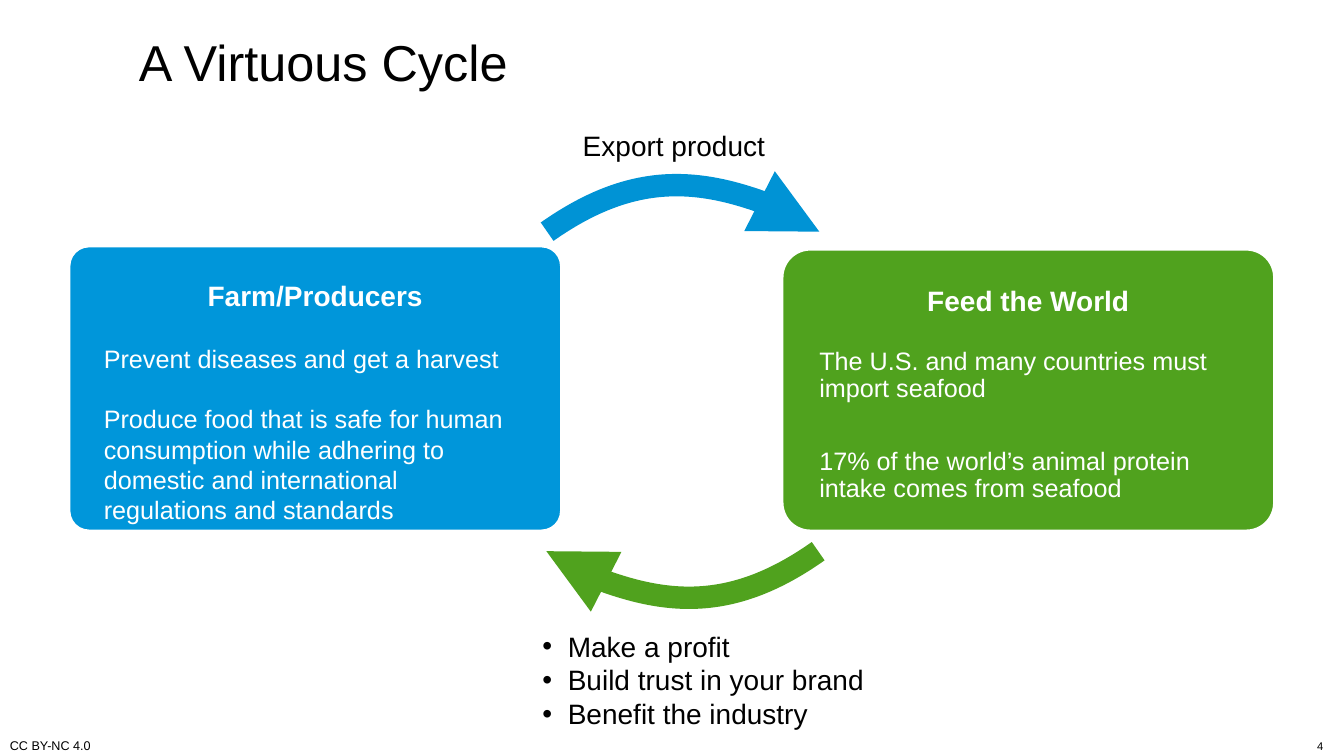
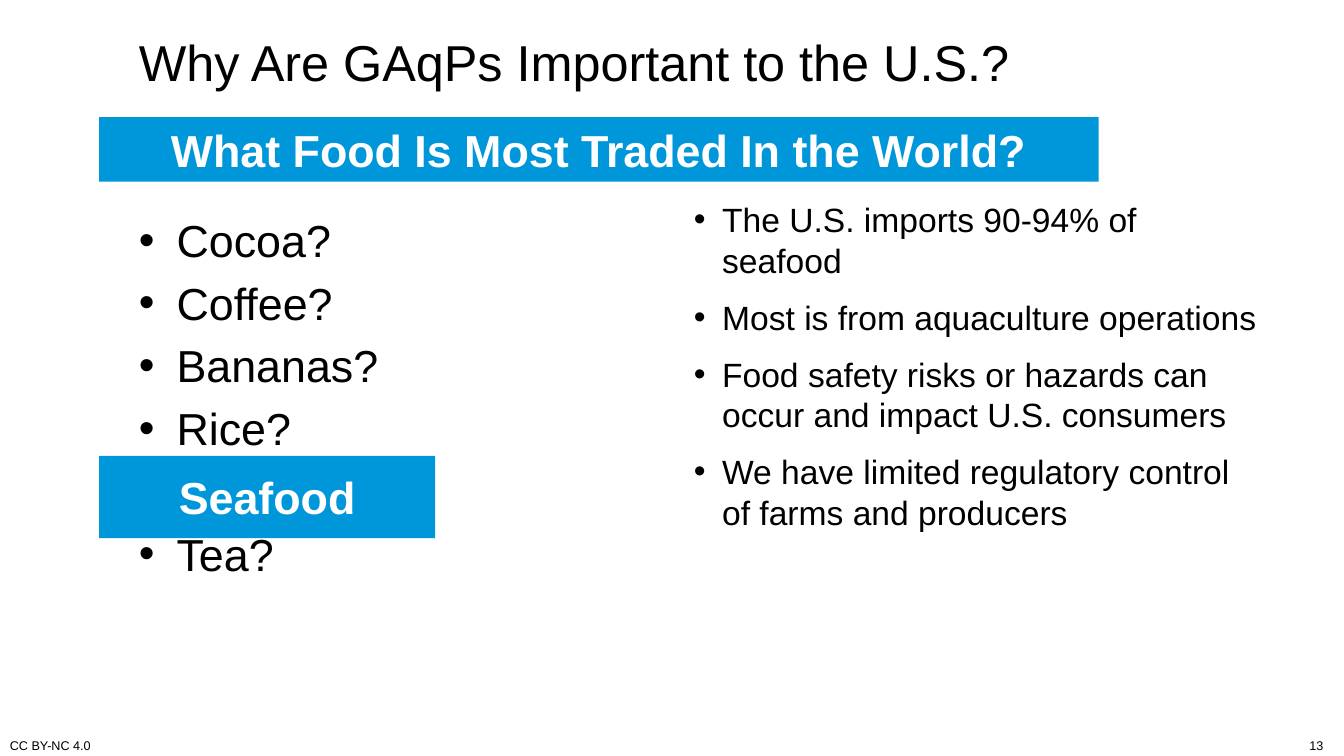
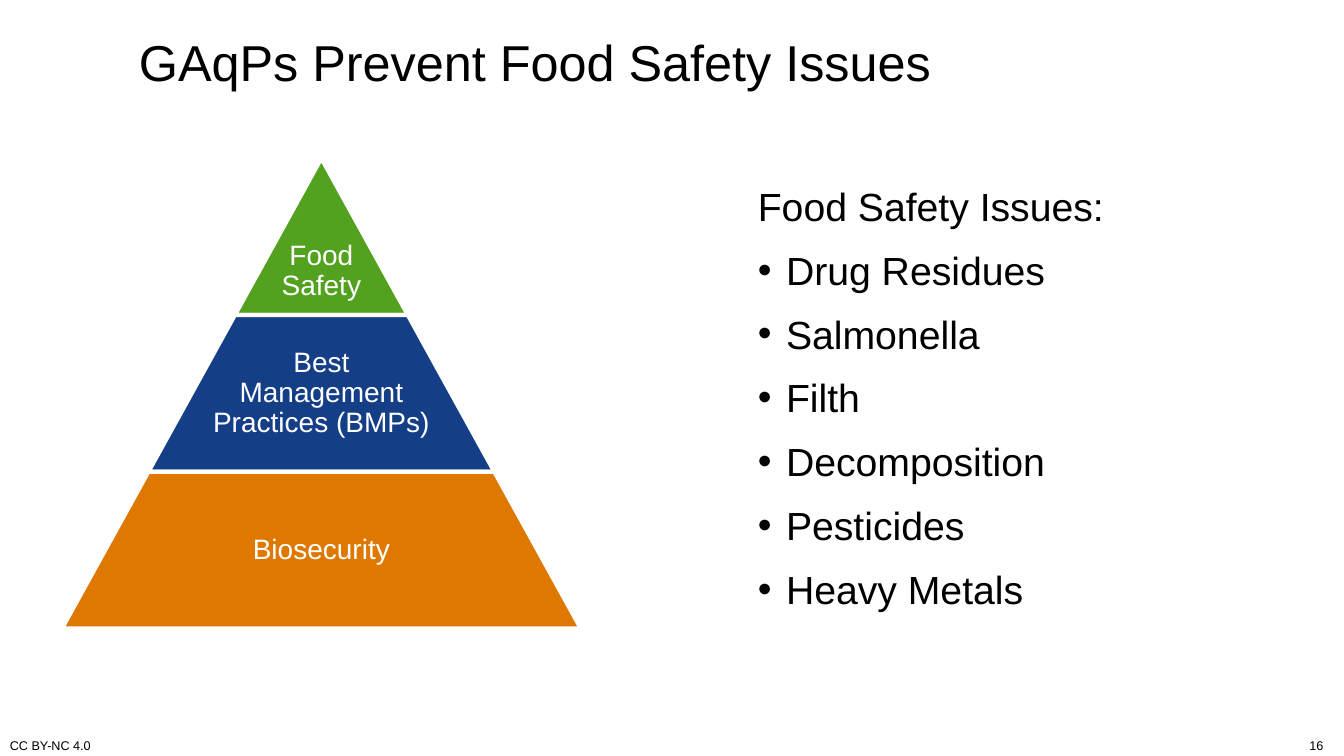
from dataclasses import dataclass
from typing import Any

import pptx
import pptx.dml.color
import pptx.enum.shapes
import pptx.enum.text
import pptx.oxml
import pptx.oxml.ns
import pptx.util

Cm = pptx.util.Cm
Pt = pptx.util.Pt
Align = pptx.enum.text.PP_ALIGN
Anchor = pptx.enum.text.MSO_ANCHOR
Kind = pptx.enum.shapes.MSO_SHAPE
qn = pptx.oxml.ns.qn
SPACE = pptx.oxml.ns.nsdecls("a")


# Theme
@dataclass(frozen=True)
class Theme:
    font: str = "Arial"
    black: str = "000000"
    white: str = "FFFFFF"
    blue: str = "0096DA"
    sky: str = "0093D5"
    green: str = "50A21E"
    leaf: str = "52A11F"
    navy: str = "143E86"
    orange: str = "DF7800"
    title: int = 36
    large: int = 32
    list: int = 28
    point: int = 24
    label: int = 20
    body: int = 18
    foot: int = 9
    small: int = 8


THEME = Theme()


@dataclass(frozen=True)
class Box:
    left: float
    top: float
    width: float
    height: float

    def cm(self) -> tuple:
        return Cm(self.left), Cm(self.top), Cm(self.width), Cm(self.height)


@dataclass(frozen=True)
class Para:
    text: str
    size: int
    color: str = THEME.black
    bold: bool = False
    align: Any = Align.LEFT
    indent: float = 0
    before: float = 0
    after: float = 0
    line: float = 1.0


@dataclass(frozen=True)
class Card:
    box: Box
    fill: str
    round: float
    paras: list


@dataclass(frozen=True)
class Arc:
    frame: Box
    start: float
    end: float
    level: float
    bend: float
    color: str


@dataclass(frozen=True)
class Tier:
    text: str
    fill: str
    width: float
    shift: float = 0


# Text
def rgb(color: str) -> pptx.dml.color.RGBColor:
    return pptx.dml.color.RGBColor.from_string(color)


def bullet(para: Any, indent: float) -> None:
    props = para._p.get_or_add_pPr()
    props.set("marL", str(Cm(indent)))
    props.set("indent", str(-Cm(indent)))
    for tag, key, value in (("a:buFont", "typeface", THEME.font),
                            ("a:buChar", "char", "•")):
        mark = pptx.oxml.parse_xml(f"<{tag} {SPACE}/>")
        mark.set(key, value)
        props.append(mark)


def write(frame: Any, paras: list, anchor: Any = Anchor.TOP,
          inset: tuple = (0.25, 0.13)) -> None:
    frame.word_wrap = True
    frame.auto_size = pptx.enum.text.MSO_AUTO_SIZE.NONE
    frame.vertical_anchor = anchor
    frame.margin_left = frame.margin_right = Cm(inset[0])
    frame.margin_top = frame.margin_bottom = Cm(inset[1])
    for num, item in enumerate(paras):
        para = frame.paragraphs[0] if num == 0 else frame.add_paragraph()
        para.text = item.text
        para.alignment = item.align
        para.line_spacing = item.line
        para.space_before = Pt(item.before if num else 0)
        para.space_after = Pt(item.after)
        if item.indent:
            bullet(para, item.indent)
        for run in para.runs:
            run.font.name = THEME.font
            run.font.size = Pt(item.size)
            run.font.bold = item.bold
            run.font.color.rgb = rgb(item.color)


def label(slide: Any, box: Box, paras: list, **style: Any) -> Any:
    shape = slide.shapes.add_textbox(*box.cm())
    write(shape.text_frame, paras, **style)
    return shape


# Shapes
def block(slide: Any, kind: Any, box: Box, fill: str, edge: float = 0) -> Any:
    shape = slide.shapes.add_shape(kind, *box.cm())
    shape.shadow.inherit = False
    shape.fill.solid()
    shape.fill.fore_color.rgb = rgb(fill)
    if edge:
        shape.line.color.rgb = rgb(THEME.white)
        shape.line.width = Pt(edge)
    else:
        shape.line.fill.background()
    return shape


def banner(slide: Any, box: Box, text: str) -> None:
    shape = block(slide, Kind.RECTANGLE, box, THEME.blue)
    write(shape.text_frame, [Para(text, THEME.large, THEME.white, True, Align.CENTER)],
          Anchor.MIDDLE)


def draw_card(slide: Any, card: Card) -> None:
    shape = block(slide, Kind.ROUNDED_RECTANGLE, card.box, card.fill, 2)
    shape.adjustments[0] = card.round
    write(shape.text_frame, card.paras, inset=(0.73, 0.76))


def draw_arc(slide: Any, arc: Arc) -> None:
    """Draw a cubic curve whose handles sit at 30% and 70% of its width."""
    frame, span = arc.frame, arc.end - arc.start
    dots = [(arc.start + span * part, arc.level + arc.bend * lift)
            for part, lift in ((0, 0), (0.3, 1), (0.7, 1), (1, 0))]
    pen = slide.shapes.build_freeform(Cm(frame.left), Cm(frame.top))
    pen.add_line_segments([(Cm(frame.left + frame.width),
                            Cm(frame.top + frame.height))], close=False)
    shape = pen.convert_to_shape()
    # Swap the frame's diagonal for the curve
    marks = [f'<a:pt x="{Cm(x - frame.left)}" y="{Cm(y - frame.top)}"/>'
             for x, y in dots]
    track = shape.element.spPr.find(".//" + qn("a:path"))
    for old in list(track):
        track.remove(old)
    for tag, part in (("moveTo", marks[:1]), ("cubicBezTo", marks[1:])):
        track.append(pptx.oxml.parse_xml(
            f"<a:{tag} {SPACE}>{''.join(part)}</a:{tag}>"))
    shape.shadow.inherit = False
    shape.fill.background()
    shape.line.color.rgb = rgb(arc.color)
    shape.line.width = Pt(16)
    tip = pptx.oxml.parse_xml(f'<a:tailEnd {SPACE} type="triangle"/>')
    shape.element.spPr.find(qn("a:ln")).append(tip)


# Shared slide parts
def footer(deck: Any, layout: Any) -> None:
    """Place the licence line on the layout, so that every slide shows it."""
    slide = deck.slides[0]
    box = label(slide, Box(0, 18.57, 7.04, 0.53), [Para("CC BY-NC 4.0", THEME.foot)],
                anchor=Anchor.BOTTOM)
    box.element.nvSpPr.cNvPr.set("id", "99")
    layout.shapes.element.append(box.element)


def page(deck: Any, title: str, number: str, size: int = THEME.foot) -> Any:
    slide = deck.slides.add_slide(deck.slide_layouts[5])
    head = slide.shapes.title
    head.left, head.top, head.width, head.height = Box(3.25, 0, 29.21, 3.07).cm()
    write(head.text_frame, [Para(title, THEME.title)], Anchor.MIDDLE)
    label(slide, Box(25.7, 18.52, 7.9, 0.58),
          [Para(number, size, align=Align.RIGHT)], anchor=Anchor.BOTTOM)
    return slide


# Slides
def cycle(deck: Any) -> None:
    slide = page(deck, "A Virtuous Cycle", "4", THEME.small)

    def head(text: str) -> Para:
        return Para(text, THEME.label, THEME.white, True, Align.CENTER,
                    after=22.1, line=0.9)

    def body(text: str, **style: Any) -> Para:
        return Para(text, THEME.body, THEME.white, **style)

    cards = [
        Card(Box(1.74, 6.2, 12.41, 7.18), THEME.blue, 0.07, [
            head("Farm/Producers"),
            body("Prevent diseases and get a harvest", after=21.6),
            body("Produce food that is safe for human consumption while adhering "
                 "to domestic and international regulations and standards")]),
        Card(Box(19.71, 6.28, 12.41, 7.1), THEME.green, 0.1, [
            head("Feed the World"),
            body("The U.S. and many countries must import seafood",
                 after=32.2, line=0.9),
            body("17% of the world’s animal protein intake comes from seafood",
                 line=0.9)]),
    ]
    for card in cards:
        draw_card(slide, card)
    arcs = (Arc(Box(11.3, 4.75, 11.68, 2.59), 13.79, 20.65, 5.84, -1.45, THEME.sky),
            Arc(Box(11.28, 3.15, 11.73, 12.5), 20.62, 13.77, 13.89, 1.45, THEME.green))
    for arc in arcs:
        draw_arc(slide, arc)
    label(slide, Box(13.44, 3.1, 7.09, 1.12),
          [Para("Export product", THEME.label, align=Align.CENTER)])
    gains = ("Make a profit", "Build trust in your brand", "Benefit the industry")
    label(slide, Box(13.42, 15.73, 8.86, 2.82),
          [Para(gain, THEME.label, indent=0.64) for gain in gains])


def trade(deck: Any) -> None:
    slide = page(deck, "Why Are GAqPs Important to the U.S.?", "13")
    facts = ("The U.S. imports 90-94% of seafood",
             "Most is from aquaculture operations",
             "Food safety risks or hazards can occur and impact U.S. consumers",
             "We have limited regulatory control of farms and producers")
    label(slide, Box(17.24, 4.89, 14.86, 11.79),
          [Para(fact, THEME.point, indent=0.71, before=12) for fact in facts])
    foods = ("Cocoa?", "Coffee?", "Bananas?", "Rice?", "Seafood?", "Tea?")
    label(slide, Box(3.25, 5.23, 6.65, 11.86),
          [Para(food, THEME.large, indent=0.95, before=6.4) for food in foods])
    banner(slide, Box(2.5, 11.49, 8.47, 2.07), "Seafood")
    banner(slide, Box(2.5, 2.95, 25.19, 1.63), "What Food Is Most Traded In the World?")


def safety(deck: Any) -> None:
    slide = page(deck, "GAqPs Prevent Food Safety Issues", "16")
    # Pyramid: each tier is one step wider than the tier above
    mid, top, step, high = 8.1, 3.99, 4.36, 3.95
    tiers = (Tier("Food Safety", THEME.leaf, 3, 0.87),
             Tier("Best Management Practices (BMPs)", THEME.navy, 5.66),
             Tier("Biosecurity", THEME.orange, 8.5))
    for row, tier in enumerate(tiers):
        wide, level = step * (row + 1), top + high * row
        shape = block(slide, Kind.TRAPEZOID, Box(mid - wide / 2, level, wide, high),
                      tier.fill, 3)
        shape.adjustments[0] = step / 2 / high
        label(slide, Box(mid - tier.width / 2, level + tier.shift, tier.width, high),
              [Para(tier.text, THEME.label, THEME.white, align=Align.CENTER, line=0.9)],
              anchor=Anchor.MIDDLE, inset=(0.08, 0.08))
    # Issue list
    risks = ("Drug Residues", "Salmonella", "Filth", "Decomposition",
             "Pesticides", "Heavy Metals")
    label(slide, Box(18.85, 4.46, 13.34, 11.2),
          [Para("Food Safety Issues:", THEME.list, after=12)]
          + [Para(risk, THEME.list, indent=0.71, after=12) for risk in risks])


def main() -> None:
    deck = pptx.Presentation()
    deck.slide_width, deck.slide_height = Cm(33.87), Cm(19.05)
    for build in (cycle, trade, safety):
        build(deck)
    footer(deck, deck.slide_layouts[5])
    deck.save("out.pptx")


if __name__ == "__main__":
    main()
